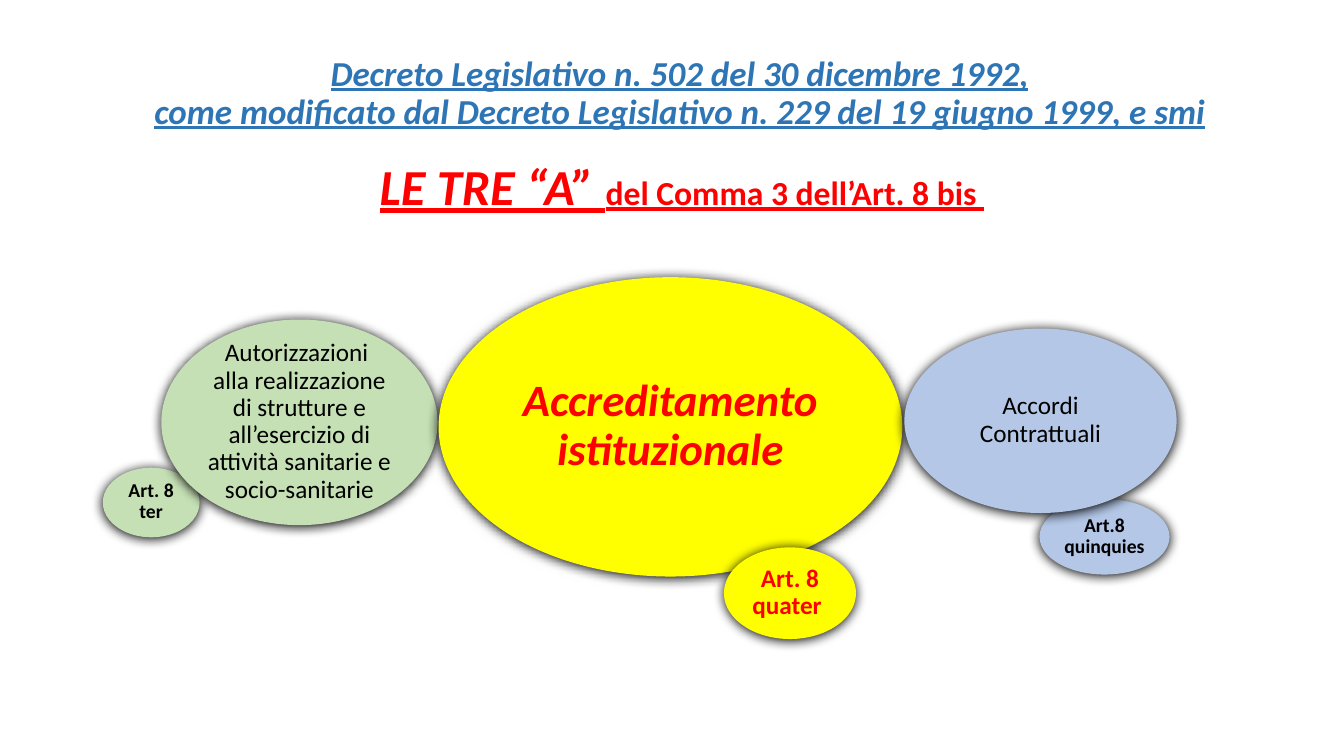
import pptx
import pptx.util
import pptx.dml.color
import pptx.enum.shapes
import pptx.enum.text
import pptx.oxml
import pptx.oxml.ns
from dataclasses import dataclass


@dataclass(frozen=True)
class Theme:
    font: str = "Calibri"
    blue: str = "2E75B6"
    red: str = "FF0000"
    black: str = "000000"
    green_fill: str = "C5E0B4"
    yellow_fill: str = "FFFF00"
    blue_fill: str = "B4C7E7"
    article_size: int = 14
    body_size: int = 18
    detail_size: int = 24
    title_size: int = 25
    key_size: int = 32
    heading_size: int = 36


THEME = Theme()
PX_PER_INCH = 100


def px(length):
    return pptx.util.Inches(length / PX_PER_INCH)


def set_values(target, values):
    for name, value in values.items():
        setattr(target, name, value)


def write_paragraph(frame, runs, line_spacing):
    paragraph = frame.paragraphs[0]
    set_values(paragraph, {
        "alignment": pptx.enum.text.PP_ALIGN.CENTER,
        "line_spacing": line_spacing,
    })
    for text, color, values in runs:
        for index, line in enumerate(text.split("\n")):
            if index:
                paragraph.add_line_break()
            run = paragraph.add_run()
            run.text = line
            set_values(run.font, {"name": THEME.font, **values})
            run.font.color.rgb = pptx.dml.color.RGBColor.from_string(color)


def add_heading(slide, box, runs, anchor, line_spacing):
    shape = slide.shapes.add_textbox(*map(px, box))
    set_values(shape.text_frame, {"word_wrap": True, "vertical_anchor": anchor})
    write_paragraph(shape.text_frame, runs, line_spacing)


def add_soft_shadow(shape):
    shape.shadow.inherit = False
    effects = shape._element.spPr.find(pptx.oxml.ns.qn("a:effectLst"))
    effects.append(pptx.oxml.parse_xml(
        f'<a:outerShdw {pptx.oxml.ns.nsdecls("a")} blurRad="{pptx.util.Pt(8.5)}" '
        f'dist="{pptx.util.Pt(1)}" dir="5400000" algn="ctr" rotWithShape="0">'
        '<a:srgbClr val="000000"/></a:outerShdw>'
    ))


def add_bubble(slide, box, fill, text, color, values):
    shape = slide.shapes.add_shape(
        pptx.enum.shapes.MSO_SHAPE.OVAL, *map(px, box))
    shape.fill.solid()
    shape.fill.fore_color.rgb = pptx.dml.color.RGBColor.from_string(fill)
    shape.line.fill.background()
    add_soft_shadow(shape)
    set_values(shape.text_frame, {
        "word_wrap": True,
        "vertical_anchor": pptx.enum.text.MSO_ANCHOR.MIDDLE,
        "margin_left": px(4),
        "margin_right": px(4),
        "margin_top": px(2),
        "margin_bottom": px(3),
    })
    write_paragraph(shape.text_frame, [(text, color, values)], 0.9)


def add_headings(slide, box):
    left, top, width, height = box
    emphasis = {"bold": True, "italic": True, "underline": True}
    add_heading(slide, (left, top, width, 82), [(
        "Decreto Legislativo n. 502 del 30 dicembre 1992,\n"
        "come modificato dal Decreto Legislativo n. 229 del 19 giugno 1999, e smi",
        THEME.blue,
        {**emphasis, "size": pptx.util.Pt(THEME.title_size)},
    )], pptx.enum.text.MSO_ANCHOR.MIDDLE, 0.9)
    add_heading(slide, (left + 70, top + 97, width - 135, height - 97), [
        ("LE TRE “A” ", THEME.red,
         {**emphasis, "size": pptx.util.Pt(THEME.heading_size)}),
        ("del Comma 3 dell’Art. 8 bis ", THEME.red,
         {**emphasis, "italic": False, "size": pptx.util.Pt(THEME.detail_size)}),
    ], pptx.enum.text.MSO_ANCHOR.TOP, 1.0)


def add_bubbles(slide, box):
    left, top, width, height = box
    article = {"size": pptx.util.Pt(THEME.article_size), "bold": True}
    body = {"size": pptx.util.Pt(THEME.body_size), "bold": False}
    key = {"size": pptx.util.Pt(THEME.key_size), "bold": True, "italic": True}
    bubbles = [
        ((0, 189, 96, 69), THEME.green_fill, "Art. 8 ter", THEME.black, article),
        ((58, 42, 274, 204), THEME.green_fill,
         "Autorizzazioni  alla realizzazione di strutture e all’esercizio di "
         "attività sanitarie e socio-sanitarie", THEME.black, body),
        ((333, 0, 460, 297), THEME.yellow_fill,
         "Accreditamento istituzionale", THEME.red, key),
        ((width - 136, 220, 129, 75), THEME.blue_fill,
         "Art.8 quinquies", THEME.black, article),
        ((616, height - 91, 131, 91), THEME.yellow_fill,
         "Art. 8 quater ", THEME.red, {**body, "bold": True}),
        ((width - 270, 51, 270, 183), THEME.blue_fill,
         "Accordi Contrattuali", THEME.black, body),
    ]
    for (x, y, bubble_width, bubble_height), *content in bubbles:
        add_bubble(slide, (left + x, top + y, bubble_width, bubble_height), *content)


def main():
    presentation = pptx.Presentation()
    set_values(presentation, {"slide_width": px(1333), "slide_height": px(750)})
    slide = presentation.slides.add_slide(presentation.slide_layouts[6])
    add_headings(slide, (90, 52, 1168, 168))
    add_bubbles(slide, (102, 275, 1065, 359))
    presentation.save("out.pptx")


if __name__ == "__main__":
    main()
